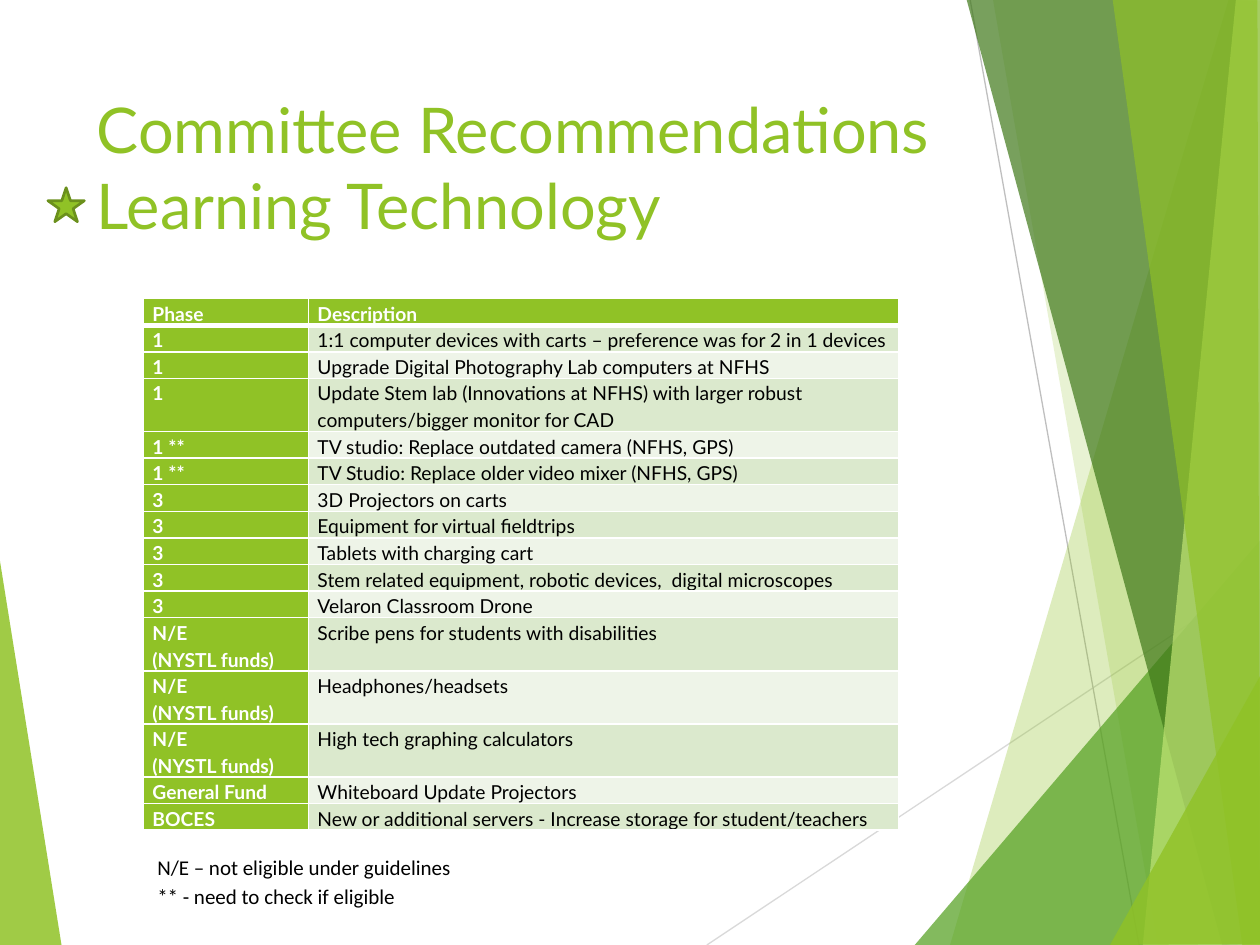
from lxml import etree
from pptx import Presentation
from pptx.dml.color import RGBColor
from pptx.enum import shapes, text
from pptx.oxml import ns
from pptx.util import Inches, Pt

GREEN, WHITE, BLACK = "90C226", "FFFFFF", "000000"
LINE_HEIGHT = 0.21

# Facets: corner points, colour, opacity in percent
LEFT_FACET = ([(-0.01, 4.39), (0.49, 7.51), (-0.01, 7.5)], GREEN, 85)
RIGHT_FACETS = [
    ([(9.75, 0), (7.54, 7.5), (10.02, 7.51), (10.01, 0.01)], GREEN, 30),
    ([(7.88, -0.01), (9.19, 7.5), (10.01, 7.5), (10.01, -0.01)], GREEN, 20),
    ([(7.26, 7.5), (10, 4.29), (10.01, 7.5)], "54A021", 72),
    ([(7.67, -0.01), (9.7, 7.5), (10.01, 7.49), (10.01, -0.01)], "3F7819", 70),
    ([(9.81, -0.01), (9.07, 7.5), (10.01, 7.5), (10, -0.01)], "C0E474", 70),
    ([(8.83, -0.01), (9.86, 7.5), (10, 7.5), (9.98, -0.01)], GREEN, 65),
    ([(8.81, 7.5), (10.01, 5.35), (10.01, 7.49)], GREEN, 80),
]
RULES = [((5.61, 7.5), (10.01, 4.57), "D9D9D9"), ((7.7, 0), (9.04, 7.5), "BFBFBF")]

NOT_ELIGIBLE = "N/E\n(NYSTL funds)"
# Phase, description, number of text lines
RECOMMENDATIONS = [
    ("Phase", "Description", 1),
    ("1", "1:1 computer devices with carts – preference was for 2 in 1 devices", 1),
    ("1", "Upgrade Digital Photography Lab computers at NFHS", 1),
    ("1", "Update Stem lab (Innovations at NFHS) with larger robust "
          "computers/bigger monitor for CAD", 2),
    ("1 **", "TV studio: Replace outdated camera (NFHS, GPS)", 1),
    ("1 **", "TV Studio: Replace older video mixer (NFHS, GPS)", 1),
    ("3", "3D Projectors on carts", 1),
    ("3", "Equipment for virtual fieldtrips", 1),
    ("3", "Tablets with charging cart", 1),
    ("3", "Stem related equipment, robotic devices,  digital microscopes", 1),
    ("3", "Velaron Classroom Drone", 1),
    (NOT_ELIGIBLE, "Scribe pens for students with disabilities", 2),
    (NOT_ELIGIBLE, "Headphones/headsets", 2),
    (NOT_ELIGIBLE, "High tech graphing calculators", 2),
    ("General Fund", "Whiteboard Update Projectors", 1),
    ("BOCES", "New or additional servers - Increase storage for student/teachers", 1),
]


def paint(color_format, color):
    color_format.rgb = RGBColor.from_string(color)


def fill_solid(fill, color):
    fill.solid()
    paint(fill.fore_color, color)


def apply(target, formats):
    for name, value in formats.items():
        setattr(target, name, value)


def write(frame, wording, color, font, spacing):
    """Fill a text frame, one paragraph per line of wording."""
    frame.text = wording
    for paragraph in frame.paragraphs:
        apply(paragraph, spacing)
        for run in paragraph.runs:
            apply(run.font, font)
            paint(run.font.color, color)


def add_facet(slide, corners, color, opacity):
    points = [(Inches(x), Inches(y)) for x, y in corners]
    builder = slide.shapes.build_freeform(*points[0])
    builder.add_line_segments(points[1:], close=True)
    facet = builder.convert_to_shape()
    facet.shadow.inherit = False
    facet.line.fill.background()
    fill_solid(facet.fill, color)
    tint = facet.fill._xPr.find(".//" + ns.qn("a:srgbClr"))
    etree.SubElement(tint, ns.qn("a:alpha")).set("val", str(opacity * 1000))


def add_rule(slide, start, end, color):
    ends = [Inches(value) for value in start + end]
    rule = slide.shapes.add_connector(shapes.MSO_CONNECTOR.STRAIGHT, *ends)
    rule.line.width = Pt(0.75)
    paint(rule.line.color, color)
    etree.SubElement(rule._element.spPr, ns.qn("a:effectLst"))


def add_text(slide, box, wording, color, font, spacing):
    frame = slide.shapes.add_textbox(*map(Inches, box)).text_frame
    frame.word_wrap = True
    write(frame, wording, color, font, spacing)


def add_star(slide):
    star = slide.shapes.add_shape(shapes.MSO_SHAPE.STAR_5_POINT, Inches(0.38),
                                  Inches(1.49), Inches(0.29), Inches(0.27))
    star.shadow.inherit = False
    fill_solid(star.fill, GREEN)
    star.line.width = Pt(1.5)
    paint(star.line.color, "6B901C")


def set_borders(cell, widths):
    """Draw white cell borders; widths in points by side."""
    properties = cell._tc.get_or_add_tcPr()
    for side, width in widths.items():
        border = etree.SubElement(properties, ns.qn("a:ln" + side), w=str(Pt(width)))
        solid = etree.SubElement(border, ns.qn("a:solidFill"))
        etree.SubElement(solid, ns.qn("a:srgbClr"), val=WHITE)


def add_recommendations(slide):
    height = LINE_HEIGHT * sum(lines for *_, lines in RECOMMENDATIONS)
    table = slide.shapes.add_table(len(RECOMMENDATIONS), 2, Inches(1.14), Inches(2.37),
                                   Inches(5.99), Inches(height)).table
    table.horz_banding = False
    for column, width in zip(table.columns, (1.31, 4.68)):
        column.width = Inches(width)
    margins = {"margin_left": Inches(0.07), "margin_right": Inches(0.07),
               "margin_top": 0, "margin_bottom": 0}

    for r, (*wordings, lines) in enumerate(RECOMMENDATIONS):
        table.rows[r].height = Inches(LINE_HEIGHT * lines)
        spacing = {"line_spacing": 1.15, "space_after": Pt(0 if r else 10)}
        borders = {"L": 1, "R": 1, "T": 3 if r == 1 else 1, "B": 1 if r else 3}
        for c, wording in enumerate(wordings):
            cell = table.cell(r, c)
            heading = r == 0 or c == 0
            apply(cell, margins)
            set_borders(cell, borders)
            band = "DBE9CD" if r % 2 else "EEF4E8"
            fill_solid(cell.fill, GREEN if heading else band)
            font = {"name": "Lato", "size": Pt(11), "bold": heading}
            write(cell.text_frame, wording, WHITE if heading else BLACK, font, spacing)


def main():
    deck = Presentation()
    deck.slide_width, deck.slide_height = Inches(10), Inches(7.5)
    slide = deck.slides.add_slide(deck.slide_layouts[6])

    # Background decoration
    add_facet(slide, *LEFT_FACET)
    for rule in RULES:
        add_rule(slide, *rule)
    for facet in RIGHT_FACETS:
        add_facet(slide, *facet)

    # Title, table and footnotes
    add_text(slide, (0.67, 0.67, 6.94, 1.44),
             "Committee Recommendations \vLearning Technology", GREEN,
             {"name": "Lato", "size": Pt(36)}, {"alignment": text.PP_ALIGN.LEFT})
    add_recommendations(slide)
    add_text(slide, (1.15, 6.7, 5, 0.55),
             "N/E – not eligible under guidelines\n** - need to check if eligible", BLACK,
             {"name": "Calibri", "size": Pt(12)}, {"line_spacing": 1.15})
    add_star(slide)

    deck.save("out.pptx")


if __name__ == "__main__":
    main()
